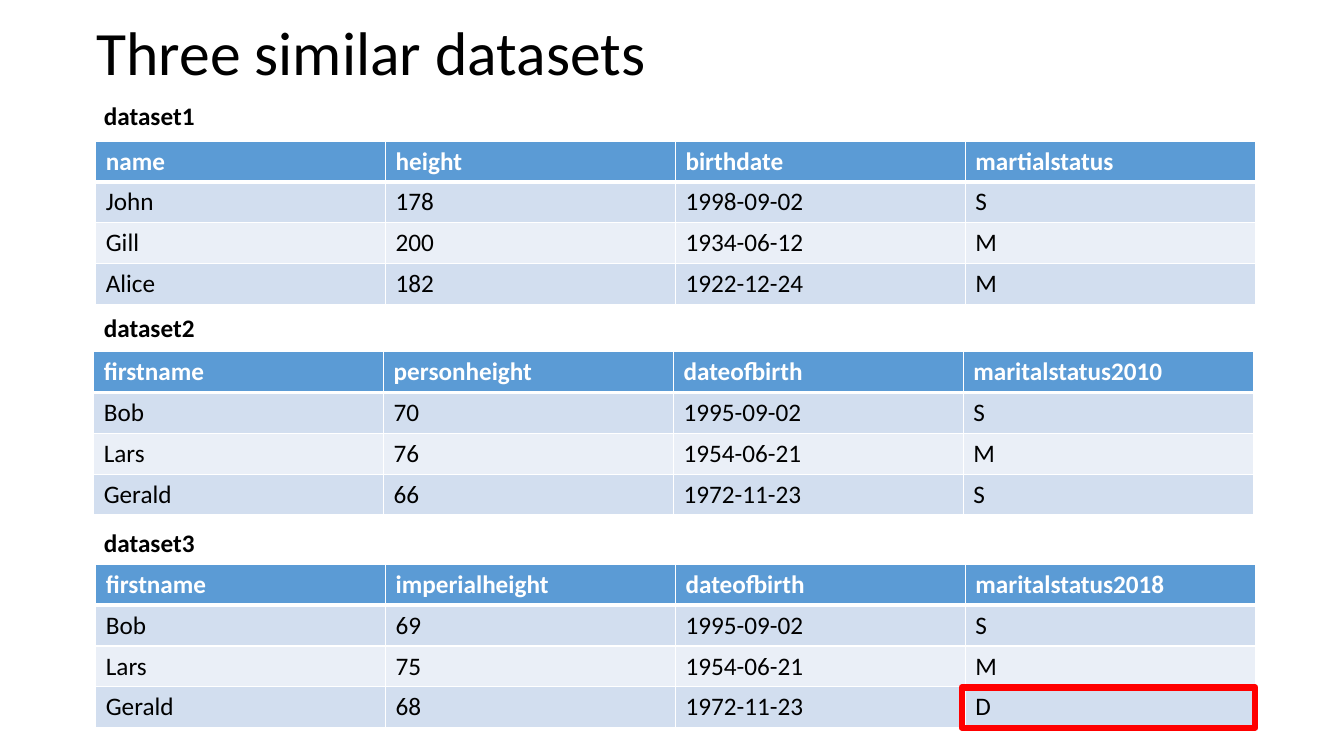
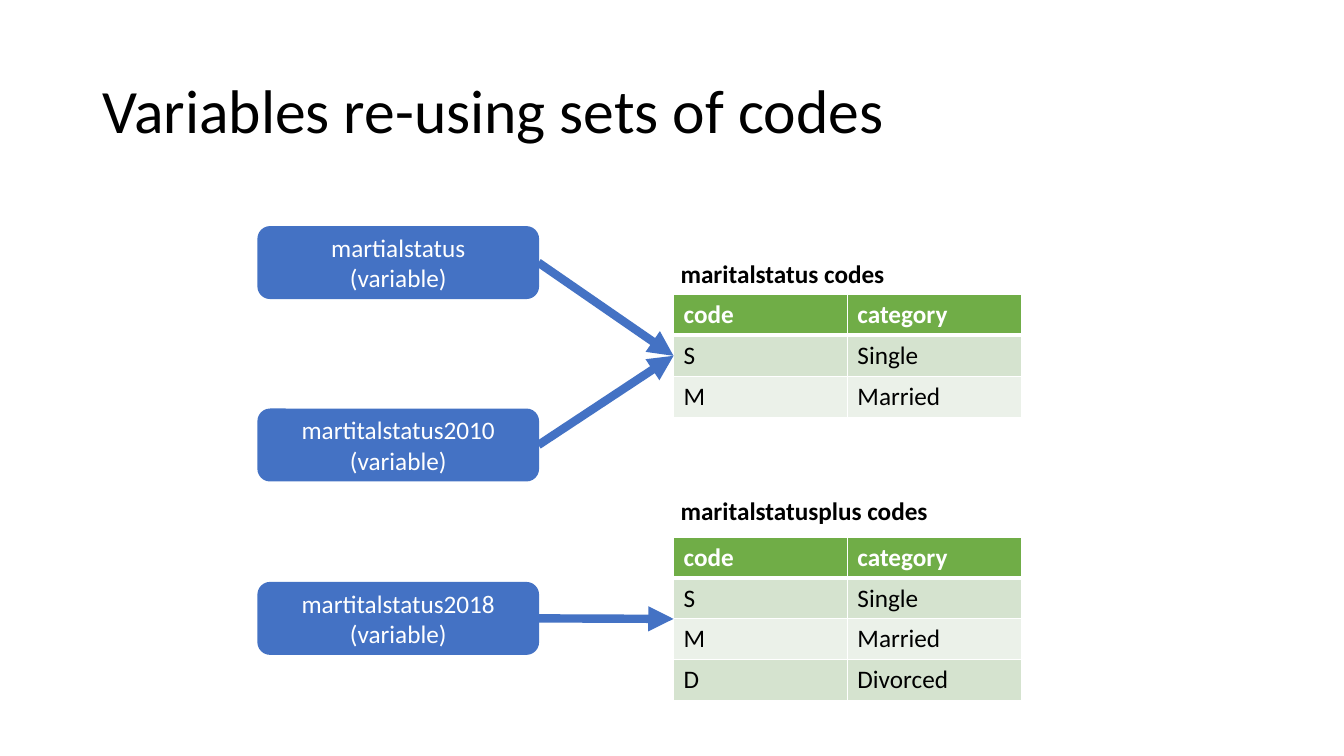
from lxml import etree
from pptx import Presentation
from pptx.dml.color import RGBColor
from pptx.enum.shapes import MSO_CONNECTOR, MSO_SHAPE
from pptx.enum.text import MSO_ANCHOR, PP_ALIGN
from pptx.oxml.ns import qn
from pptx.util import Pt

PX = 9144
FONT = "Calibri"
RECT, ROUND = MSO_SHAPE.RECTANGLE, MSO_SHAPE.ROUNDED_RECTANGLE
STRAIGHT = MSO_CONNECTOR.STRAIGHT
MIDDLE = MSO_ANCHOR.MIDDLE
LEFT, CENTER = PP_ALIGN.LEFT, PP_ALIGN.CENTER

HUES = {
    "black": "000000", "white": "FFFFFF", "red": "FF0000", "node": "4472C4",
    "blue": "5B9BD5", "blue1": "D2DEEF", "blue2": "EAEFF7",
    "green": "70AD47", "green1": "D5E3CF", "green2": "EBF1E9",
}
BLUE = ("blue", "blue1", "blue2")
GREEN = ("green", "green1", "green2")
ROW_H = 41

DATA_TITLE = ("Three similar datasets", 86, -17)
DATA_W, DATA_H, NAME_X, NAME_W = 1150, 162, 93, 288
DATASETS = [
    ("dataset1", 96, 95, 140, [
        ("name", "height", "birthdate", "martialstatus"),
        ("John", "178", "1998-09-02", "S"),
        ("Gill", "200", "1934-06-12", "M"),
        ("Alice", "182", "1922-12-24", "M")]),
    ("dataset2", 306, 93, 349, [
        ("firstname", "personheight", "dateofbirth", "maritalstatus2010"),
        ("Bob", "70", "1995-09-02", "S"),
        ("Lars", "76", "1954-06-21", "M"),
        ("Gerald", "66", "1972-11-23", "S")]),
    ("dataset3", 519, 95, 560, [
        ("firstname", "imperialheight", "dateofbirth", "maritalstatus2018"),
        ("Bob", "69", "1995-09-02", "S"),
        ("Lars", "75", "1954-06-21", "M"),
        ("Gerald", "68", "1972-11-23", "D")]),
]
MARK = (954, 682, 291, 40)

CODE_TITLE = ("Variables re-using sets of codes", 92, 40)
CODE_X, CODE_W, HEAD_X = 668, 345, 665
HEAD = ("code", "category")
CODES = [
    ("maritalstatus codes", 252, 292, 122,
     [HEAD, ("S", "Single"), ("M", "Married")]),
    ("maritalstatusplus codes", 488, 533, 162,
     [HEAD, ("S", "Single"), ("M", "Married"), ("D", "Divorced")]),
]
NODE_X, NODE_W, NODE_H = 256, 278, 71
NODES = [
    ("martialstatus", 225, 0),
    ("martitalstatus2010", 406, 0),
    ("martitalstatus2018", 578, 1),
]


def emu(*sizes):
    return [round(size * PX) for size in sizes]


def rgb(hue):
    return RGBColor.from_string(HUES[hue])


def write(par, text, size, hue, bold=False, align=LEFT):
    par.text = text
    par.alignment = align
    font = par.font
    font.name, font.size, font.bold = FONT, Pt(size), bold
    font.color.rgb = rgb(hue)


def add_title(slide, text, x, y):
    frame = slide.shapes.add_textbox(*emu(x, y, 1150, 145)).text_frame
    frame.word_wrap = True
    frame.vertical_anchor = MIDDLE
    par = frame.paragraphs[0]
    write(par, text, 44, "black")
    par.line_spacing = 0.9


def add_edges(cell, top, bottom):
    props = cell._tc.get_or_add_tcPr()
    widths = (("lnL", 1), ("lnR", 1), ("lnT", top), ("lnB", bottom))
    for spot, (tag, width) in enumerate(widths):
        edge = etree.Element(qn("a:" + tag), w=str(Pt(width)))
        fill = etree.SubElement(edge, qn("a:solidFill"))
        etree.SubElement(fill, qn("a:srgbClr"), val=HUES["white"])
        props.insert(spot, edge)


def add_grid(slide, rows, x, y, w, h, fills=None):
    count, cols = len(rows), len(rows[0])
    table = slide.shapes.add_table(count, cols, *emu(x, y, w, h)).table
    for col in table.columns:
        col.width = emu(w / cols)[0]
    for r, row in enumerate(rows):
        table.rows[r].height = emu(h / count)[0]
        for c, text in enumerate(row):
            cell = table.cell(r, c)
            hue = "white" if fills and r == 0 else "black"
            write(cell.text_frame.paragraphs[0], text, 18, hue, r == 0)
            if fills:
                cell.fill.solid()
                cell.fill.fore_color.rgb = rgb(fills[0 if r == 0 else 2 - r % 2])
            else:
                cell.fill.background()
            add_edges(cell, 3 if r == 1 else 1, 3 if r == 0 else 1)


def add_label(slide, text, x, y):
    add_grid(slide, [(text,)], x, y, NAME_W, ROW_H)


def add_box(slide, kind, box, hue, width, filled):
    shape = slide.shapes.add_shape(kind, *emu(*box))
    shape.shadow.inherit = False
    if filled:
        shape.fill.solid()
        shape.fill.fore_color.rgb = rgb(hue)
    else:
        shape.fill.background()
    shape.line.color.rgb = rgb(hue)
    shape.line.width = Pt(width)
    return shape


def add_arrow(slide, x1, y1, x2, y2):
    arrow = slide.shapes.add_connector(STRAIGHT, *emu(x1, y1, x2, y2))
    arrow.line.color.rgb = rgb("node")
    arrow.line.width = Pt(6)
    etree.SubElement(arrow.line._get_or_add_ln(), qn("a:tailEnd"), type="triangle")
    etree.SubElement(arrow._element.spPr, qn("a:effectLst"))


def draw_data(slide):
    add_title(slide, *DATA_TITLE)
    for name, top, x, y, rows in DATASETS:
        add_label(slide, name, NAME_X, top)
        add_grid(slide, rows, x, y, DATA_W, DATA_H, BLUE)
    add_box(slide, RECT, MARK, "red", 4.5, False)


def draw_codes(slide):
    add_title(slide, *CODE_TITLE)
    for name, top, y, h, rows in CODES:
        add_label(slide, name, HEAD_X, top)
        add_grid(slide, rows, CODE_X, y, CODE_W, h, GREEN)
    for name, y, goal in NODES:
        box = (NODE_X, y, NODE_W, NODE_H)
        frame = add_box(slide, ROUND, box, "node", 1, True).text_frame
        frame.word_wrap = True
        frame.vertical_anchor = MIDDLE
        write(frame.paragraphs[0], name + "\n(variable)", 18, "white", align=CENTER)
        top, h = CODES[goal][2:4]
        add_arrow(slide, NODE_X + NODE_W, y + NODE_H / 2, CODE_X, top + h / 2)


def main():
    deck = Presentation()
    deck.slide_width, deck.slide_height = emu(1333, 750)
    blank = deck.slide_layouts[6]
    for draw in (draw_data, draw_codes):
        draw(deck.slides.add_slide(blank))
    deck.save("out.pptx")


if __name__ == "__main__":
    main()
